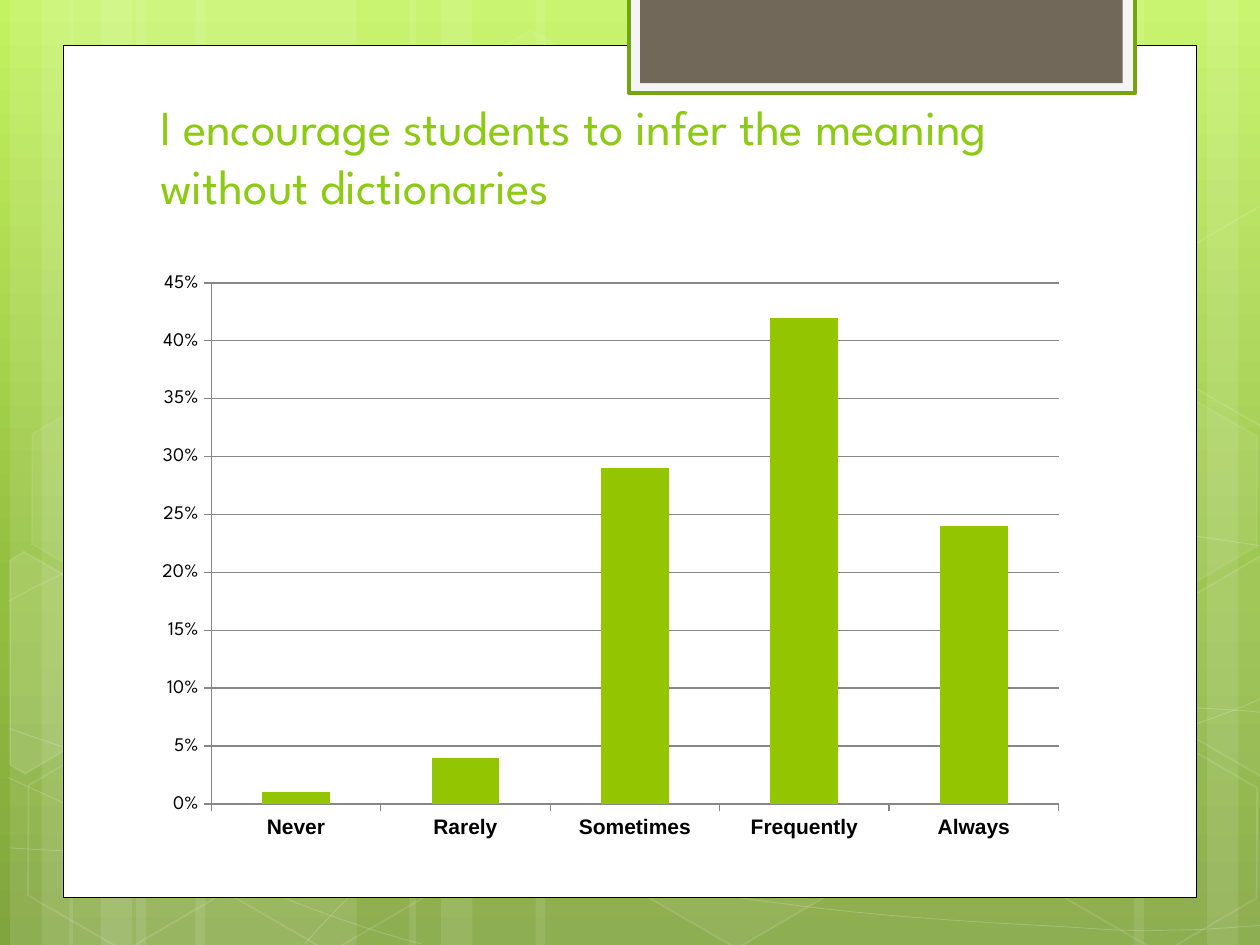
from copy import deepcopy

from lxml import etree
from pptx import Presentation
from pptx.chart.data import CategoryChartData
from pptx.dml.color import RGBColor
from pptx.enum.chart import XL_CHART_TYPE, XL_TICK_MARK
from pptx.enum.shapes import MSO_SHAPE
from pptx.enum.text import MSO_ANCHOR, PP_ALIGN
from pptx.oxml.ns import qn
from pptx.util import Inches, Pt

RECTANGLE, HEXAGON = MSO_SHAPE.RECTANGLE, MSO_SHAPE.HEXAGON
COLUMNS = XL_CHART_TYPE.COLUMN_CLUSTERED
OUTSIDE = XL_TICK_MARK.OUTSIDE
BOTTOM, LEFT = MSO_ANCHOR.BOTTOM, PP_ALIGN.LEFT

GRID_COLUMNS, GRID_ROWS = 10, 7.5
TITLE = "I encourage students to infer the meaning without dictionaries"
ANSWERS = {"Never": 0.01, "Rarely": 0.04, "Sometimes": 0.29,
           "Frequently": 0.42, "Always": 0.24}

BACKDROP = [(0, "C3F35F"), (0.62, "93BF3F"), (1, "81A53E")]
STRIPES = [(1.08, 1.75), (0.08, 0.5), (0.33, 0.83), (1.55, 1.75), (0.55, 0.5),
           (0.8, 0.83), (7.33, 1.75), (9.58, 0.5), (9, 0.83), (4.25, 3.08),
           (3.25, 0.5), (3.5, 0.83)]
CURVES = [
    [(0.07, 6.73), (0.61, 6.76), (1.15, 6.79), (1.9, 6.78), (2.65, 6.77),
     (3.58, 6.75), (4.58, 6.65), (5.58, 6.55), (7, 6.36), (7.92, 6.17),
     (8.83, 5.98), (9.77, 5.68), (10.07, 5.51)],
    [(0.07, 4.77), (0.36, 4.61), (0.65, 4.46), (1.21, 4.31), (1.78, 4.16),
     (2.59, 3.94), (3.47, 3.87), (4.36, 3.8), (5.44, 3.79), (6.54, 3.87),
     (7.64, 3.95), (9.47, 4.26), (10.07, 4.34)],
    [(0.06, 6.17), (1.27, 6.72), (2.47, 7.27), (3.34, 7.49)],
    [(0.07, 5.78), (0.38, 5.89), (0.7, 6), (1.28, 6.16), (1.86, 6.31),
     (2.73, 6.56), (3.57, 6.73), (4.4, 6.9), (5.45, 7.08), (6.28, 7.18),
     (7.11, 7.29), (8, 7.33), (8.53, 7.36), (9.05, 7.4), (9.19, 7.38),
     (9.45, 7.38), (9.71, 7.37), (9.89, 7.35), (10.07, 7.34)],
    [(2.42, 7.49), (2.6, 7.29), (2.78, 7.09), (3.02, 6.91), (3.26, 6.73),
     (3.6, 6.53), (3.88, 6.39), (4.16, 6.25), (4.33, 6.19), (4.7, 6.09),
     (5.06, 5.99), (5.73, 5.85), (6.08, 5.78), (6.44, 5.71), (6.49, 5.71),
     (6.8, 5.69), (7.11, 5.66), (7.6, 5.63), (7.94, 5.62), (8.29, 5.61),
     (8.86, 5.62), (8.86, 5.62), (9.08, 5.62), (9.3, 5.62), (9.53, 5.62),
     (9.71, 5.63), (9.88, 5.64), (9.97, 5.65), (10.06, 5.66), (10.03, 5.65),
     (10.06, 5.66)],
]
HEXAGONS = [(3.34, 0.36, 4, 8), (4.97, 5.89, 6, 12), (0.11, 5.91, None, 12),
            (0.14, 3.12, 7, 8), (1.74, 5.92, None, 12), (7.53, 4.53, 10, 12),
            (8.34, 5.93, None, 12), (8.34, 3.14, 7, 8)]
CUT_HEXAGONS = [
    ([(0.08, 4.45), (0.19, 4.38), (0.96, 4.82), (0.95, 5.7), (0.2, 6.14),
      (0.08, 6.07)], 10),
    ([(9.26, 4.85), (10.01, 4.41), (10.09, 4.46), (10.09, 6.13),
      (10.02, 6.17), (9.26, 5.73)], 4),
    ([(9.26, 2.07), (10.01, 1.63), (10.1, 1.68), (10.09, 3.35),
      (10.02, 3.39), (9.26, 2.95)], None),
]


def rgb(value):
    return RGBColor.from_string(value)


def set_opacity(fill_parent, percent):
    colour = fill_parent.find(qn("a:solidFill")).find(qn("a:srgbClr"))
    etree.SubElement(colour, qn("a:alpha")).set("val", str(percent * 1000))


def bend(shape):
    outline = next(shape.element.iter(qn("a:path")))
    legs = outline.findall(qn("a:lnTo"))
    for start in range(0, len(legs), 3):
        curve = etree.SubElement(outline, qn("a:cubicBezTo"))
        for leg in legs[start:start + 3]:
            curve.append(leg[0])
            outline.remove(leg)


class SlideBuilder:
    font = "League Spartan"
    category_font = "Arial"
    title_colour, bar_colour = "8DCA14", "94C600"
    text_colour, axis_colour = "000000", "878787"

    def __init__(self, deck):
        self.slide = deck.slides.add_slide(deck.slide_layouts[5])
        self.shapes = self.slide.shapes
        self.column = deck.slide_width / GRID_COLUMNS
        self.row = deck.slide_height / GRID_ROWS

    def place(self, x, y, width, height):
        return (round(x * self.column), round(y * self.row),
                round(width * self.column), round(height * self.row))

    def backdrop(self, stops):
        fill = self.slide.background.fill
        fill.gradient()
        fill.gradient_angle = 270
        stop_list = next(self.slide.element.iter(qn("a:gsLst")))
        stop_list.append(deepcopy(stop_list[-1]))
        for stop, (position, colour) in zip(fill.gradient_stops, stops):
            stop.position = position
            stop.color.rgb = rgb(colour)

    def paint(self, shape, fill=None, opacity=None, line=None, weight=1,
              line_opacity=None):
        shape.shadow.inherit = False
        if fill:
            shape.fill.solid()
            shape.fill.fore_color.rgb = rgb(fill)
            if opacity:
                set_opacity(shape.element.spPr, opacity)
        else:
            shape.fill.background()
        if line:
            shape.line.color.rgb = rgb(line)
            shape.line.width = Pt(weight)
            if line_opacity:
                set_opacity(shape.element.spPr.find(qn("a:ln")), line_opacity)
        else:
            shape.line.fill.background()

    def panel(self, x, y, width, height, **paint):
        self.paint(self.shapes.add_shape(
            RECTANGLE, *self.place(x, y, width, height)), **paint)

    def hexagon(self, x, y, **paint):
        shape = self.shapes.add_shape(HEXAGON, *self.place(x, y, 1.75, 1.52))
        shape.adjustments[0] = 0.285
        shape.rotation = 30
        self.paint(shape, **paint)

    def outline(self, points, closed, **paint):
        start, *rest = [self.place(x, y, 0, 0)[:2] for x, y in points]
        builder = self.shapes.build_freeform(*start)
        builder.add_line_segments(rest, close=closed)
        shape = builder.convert_to_shape()
        self.paint(shape, **paint)
        return shape

    def curve(self, knots, **paint):
        bend(self.outline(knots, False, **paint))

    def title(self, text, x, y, width, height, size):
        holder = self.shapes.title
        self.shapes.element.append(holder.element)
        holder.left, holder.top, holder.width, holder.height = self.place(
            x, y, width, height)
        frame = holder.text_frame
        frame.word_wrap = True
        frame.vertical_anchor = BOTTOM
        paragraph = frame.paragraphs[0]
        paragraph.alignment = LEFT
        run = paragraph.add_run()
        run.text = text
        self.style_font(run.font, size, self.font, colour=self.title_colour)

    def style_font(self, font, size, name, bold=False, colour=text_colour):
        font.size, font.name, font.bold = Pt(size), name, bold
        font.color.rgb = rgb(colour)

    def column_chart(self, answers, x, y, width, height):
        data = CategoryChartData(number_format="0%")
        data.categories = list(answers)
        data.add_series("Series 1", list(answers.values()))
        chart = self.shapes.add_chart(
            COLUMNS, *self.place(x, y, width, height), data).chart
        chart.has_legend = chart.has_title = False
        self.style_font(chart.font, 10, self.font)
        plot = chart.plots[0]
        plot.gap_width = 150
        plot.vary_by_categories = False
        bars = plot.series[0].format.fill
        bars.solid()
        bars.fore_color.rgb = rgb(self.bar_colour)
        categories, shares = chart.category_axis, chart.value_axis
        self.style_font(categories.tick_labels.font, 12, self.category_font, True)
        self.style_font(shares.tick_labels.font, 11, self.font)
        shares.tick_labels.number_format = "0%"
        shares.tick_labels.number_format_is_linked = False
        shares.minimum_scale, shares.maximum_scale = 0, 0.45
        shares.major_unit = 0.05
        categories.major_tick_mark = shares.major_tick_mark = OUTSIDE
        for part in (categories, shares, shares.major_gridlines):
            part.format.line.color.rgb = rgb(self.axis_colour)
            part.format.line.width = Pt(0.75)


def main():
    deck = Presentation()
    deck.slide_width, deck.slide_height = Inches(10), Inches(7.5)
    page = SlideBuilder(deck)
    white = "FFFFFF"
    page.backdrop(BACKDROP)
    for x, width in STRIPES:
        page.panel(x, 0, width, GRID_ROWS, fill=white, opacity=10)
    for knots in CURVES:
        page.curve(knots, line=white, weight=0.5, line_opacity=20)
    for x, y, opacity, line_opacity in HEXAGONS:
        page.hexagon(x, y, fill=white if opacity else None, opacity=opacity,
                     line=white, line_opacity=line_opacity)
    for corners, opacity in CUT_HEXAGONS:
        page.outline(corners, True, fill=white if opacity else None,
                     opacity=opacity, line=white, line_opacity=12)
    page.panel(0.5, 0.36, 9, 6.76, fill=white, line="000000", weight=0.5)
    page.panel(4.99, -0.02, 4.02, 0.76, fill="F5F5F5", line="74A510", weight=2)
    page.panel(5.08, -0.02, 3.83, 0.68, fill="71685A")
    page.title(TITLE, 1.17, 0.75, 7.68, 1, 27.9)
    page.column_chart(ANSWERS, 1.14, 2.08, 7.41, 4.67)
    deck.save("out.pptx")


if __name__ == "__main__":
    main()
